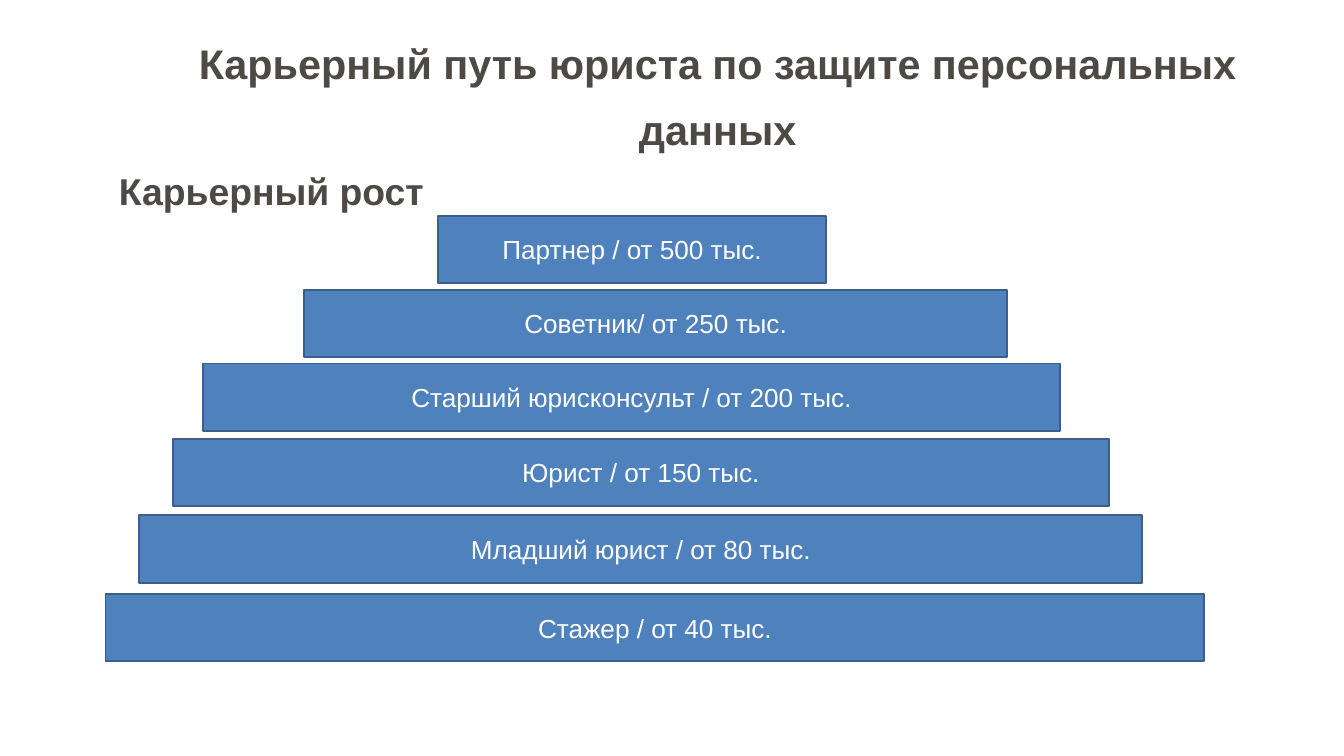
import pptx
import pptx.util
import pptx.dml.color
import pptx.enum.shapes
import pptx.enum.text

DARK = pptx.dml.color.RGBColor(0x4D, 0x4A, 0x46)
BLUE = pptx.dml.color.RGBColor(0x4F, 0x81, 0xBD)
EDGE = pptx.dml.color.RGBColor(0x3A, 0x5F, 0x8C)
WHITE = pptx.dml.color.RGBColor(0xFF, 0xFF, 0xFF)
ALIGN = pptx.enum.text.PP_ALIGN
ANCHOR = pptx.enum.text.MSO_ANCHOR

prs = pptx.Presentation()
prs.slide_width = pptx.util.Inches(20)
prs.slide_height = pptx.util.Inches(11.25)
s = prs.slides.add_slide(prs.slide_layouts[5])


def box(left, top, width, height):
    col, row = prs.slide_width / 100, prs.slide_height / 100
    return round(left * col), round(top * row), round(width * col), round(height * row)


def add_run(p, text, size, color, bold):
    r = p.add_run()
    r.text = text
    r.font.name = "Arial"
    r.font.size = pptx.util.Pt(size)
    r.font.bold = bold
    r.font.color.rgb = color


title = s.shapes.title
title.left, title.top, title.width, title.height = box(8.85, 2.84, 89.1, 25.6)
tf = title.text_frame
tf.word_wrap = True
tf.auto_size = pptx.enum.text.MSO_AUTO_SIZE.NONE
tf.vertical_anchor = ANCHOR.TOP
tf.margin_left = tf.margin_top = tf.margin_right = tf.margin_bottom = 0
headings = [
    ("Карьерный путь юриста по защите персональных данных", 44.3, ALIGN.CENTER),
    ("Карьерный рост", 40, ALIGN.LEFT),
]
for i, (text, size, align) in enumerate(headings):
    p = tf.add_paragraph() if i else tf.paragraphs[0]
    p.alignment = align
    p.line_spacing = 1.33
    p.space_before = pptx.util.Pt(0)
    add_run(p, text, size, DARK, True)

steps = [
    ("Партнер / от 500 тыс.", 32.6, 28.53, 28.85),
    ("Советник/ от 250 тыс.", 22.6, 38.31, 52.35),
    ("Старший юрисконсульт / от 200 тыс.", 15.1, 48.09, 63.75),
    ("Юрист / от 150 тыс.", 12.85, 58.04, 69.65),
    ("Младший юрист / от 80 тыс.", 10.35, 68.18, 74.65),
    ("Стажер / от 40 тыс.", 7.85, 78.58, 81.75),
]
for text, left, top, width in steps:
    sp = s.shapes.add_shape(pptx.enum.shapes.MSO_SHAPE.RECTANGLE, *box(left, top, width, 8.89))
    sp.shadow.inherit = False
    sp.fill.solid()
    sp.fill.fore_color.rgb = BLUE
    sp.line.color.rgb = EDGE
    sp.line.width = pptx.util.Pt(2)
    tf = sp.text_frame
    tf.word_wrap = True
    tf.vertical_anchor = ANCHOR.MIDDLE
    p = tf.paragraphs[0]
    p.alignment = ALIGN.CENTER
    add_run(p, text, 28, WHITE, False)

prs.save("out.pptx")
